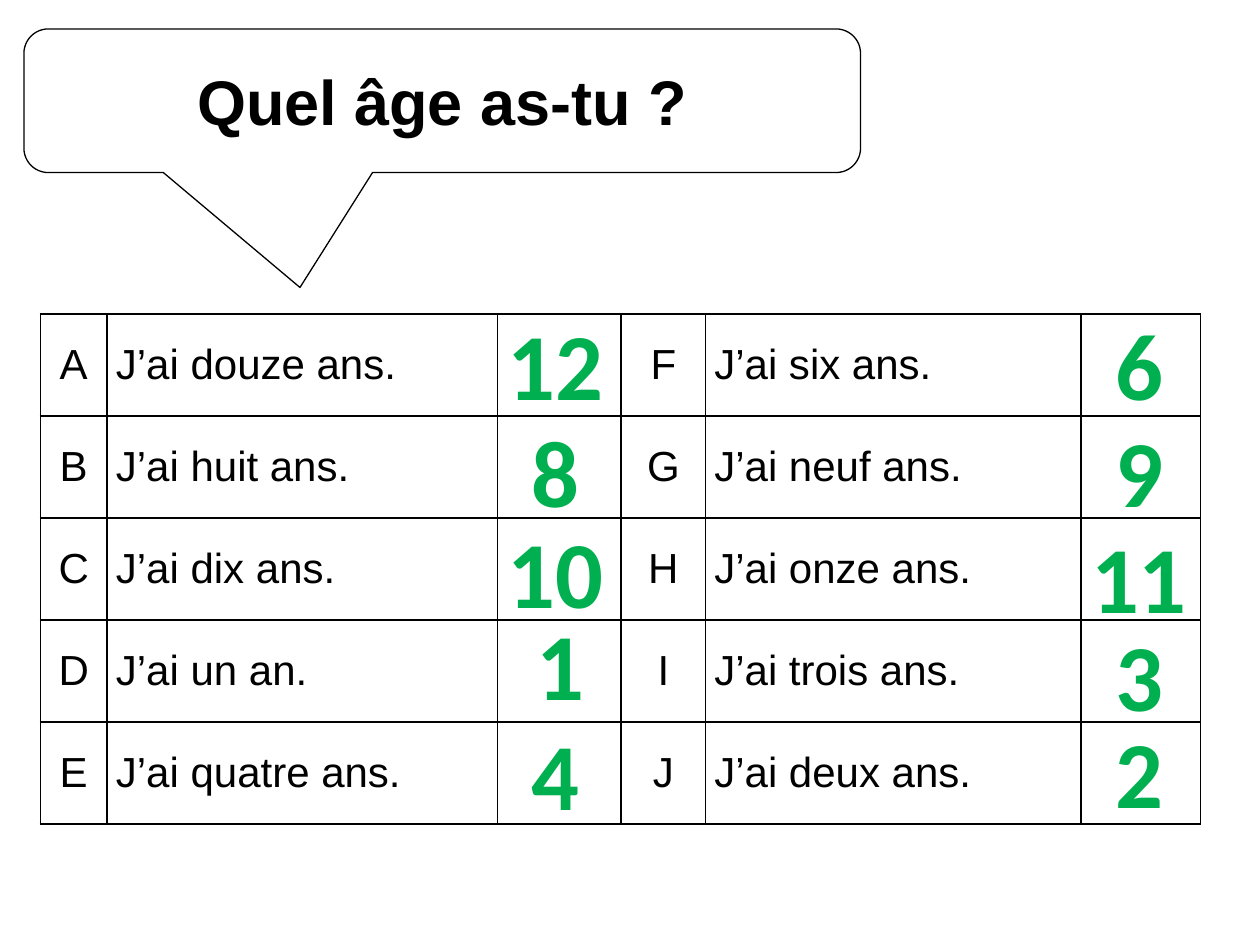
from dataclasses import dataclass

from lxml import etree
from pptx import Presentation
from pptx import util as u
from pptx.dml.color import RGBColor
from pptx.enum import shapes, text
from pptx.oxml import ns


@dataclass(frozen=True)
class Theme:
    ink: RGBColor = RGBColor(0, 0, 0)
    paper: RGBColor = RGBColor(255, 255, 255)
    answer: RGBColor = RGBColor(0, 0xB0, 0x50)
    text_font: str = "Arial"
    answer_font: str = "Calibri"
    title_size: int = 36
    table_size: int = 24
    answer_size: int = 54


@dataclass(frozen=True)
class Item:
    letter: str
    sentence: str
    age: str
    center: float
    top: float


THEME = Theme()
LEFT_ITEMS = [
    Item("A", "J’ai douze ans.", "12", 4.41, 2.38),
    Item("B", "J’ai huit ans.", "8", 4.41, 3.23),
    Item("C", "J’ai dix ans.", "10", 4.41, 4.03),
    Item("D", "J’ai un an.", "1", 4.45, 4.76),
    Item("E", "J’ai quatre ans.", "4", 4.41, 5.63),
]
RIGHT_ITEMS = [
    Item("F", "J’ai six ans.", "6", 9.04, 2.38),
    Item("G", "J’ai neuf ans.", "9", 9.04, 3.23),
    Item("H", "J’ai onze ans.", "11", 9.04, 4.07),
    Item("I", "J’ai trois ans.", "3", 9.04, 4.85),
    Item("J", "J’ai deux ans.", "2", 9.04, 5.62),
]
COLUMN_WIDTHS = [0.53, 3.1, 0.98, 0.67, 2.98, 0.95]
ROW_HEIGHT = 0.81
DIGIT_WIDTH = 0.38
BOX_PADDING = 0.2


def add_line(parent, tag: str, points: float, color: RGBColor, index: int) -> None:
    """Insert a solid DrawingML line at a given place among the children."""
    line = etree.Element(ns.qn(tag), w=str(u.Pt(points)))
    fill = etree.SubElement(line, ns.qn("a:solidFill"))
    etree.SubElement(fill, ns.qn("a:srgbClr"), val=str(color))
    parent.insert(index, line)


def write(frame, words: str, *, size: int, font: str = THEME.text_font,
          color: RGBColor = THEME.ink, bold: bool = False,
          align=text.PP_ALIGN.LEFT, outline: float = 0) -> None:
    para = frame.paragraphs[0]
    para.alignment = align
    span = para.add_run()
    span.text = words
    span.font.size = u.Pt(size)
    span.font.name = font
    span.font.bold = bold
    span.font.color.rgb = color
    if outline:
        add_line(span.font._element, "a:ln", outline, THEME.ink, 0)


def style_cell(cell) -> None:
    cell.fill.background()
    cell.vertical_anchor = text.MSO_ANCHOR.MIDDLE
    cell.margin_left = cell.margin_right = u.Inches(0.07)
    cell.margin_top = cell.margin_bottom = 0
    properties = cell._tc.get_or_add_tcPr()
    for index, side in enumerate(("a:lnL", "a:lnR", "a:lnT", "a:lnB")):
        add_line(properties, side, 1, THEME.ink, index)


def add_sentence_table(page) -> None:
    rows = len(LEFT_ITEMS)
    frame = page.shapes.add_table(
        rows, len(COLUMN_WIDTHS), u.Inches(0.32), u.Inches(2.49),
        u.Inches(sum(COLUMN_WIDTHS)), u.Inches(rows * ROW_HEIGHT))
    table = frame.table
    table.first_row = table.horz_banding = False
    for column, width in zip(table.columns, COLUMN_WIDTHS):
        column.width = u.Inches(width)
    for row in table.rows:
        row.height = u.Inches(ROW_HEIGHT)
    for cell in table.iter_cells():
        style_cell(cell)
    for first_column, items in ((0, LEFT_ITEMS), (3, RIGHT_ITEMS)):
        for row, item in enumerate(items):
            write(table.cell(row, first_column).text_frame, item.letter,
                  size=THEME.table_size, align=text.PP_ALIGN.CENTER)
            write(table.cell(row, first_column + 1).text_frame, item.sentence,
                  size=THEME.table_size)


def add_question(page) -> None:
    bubble = page.shapes.add_shape(
        shapes.MSO_SHAPE.ROUNDED_RECTANGULAR_CALLOUT,
        u.Inches(0.19), u.Inches(0.23), u.Inches(6.64), u.Inches(1.14))
    bubble.shadow.inherit = False
    for index, value in enumerate((-0.17, 1.3, 0.17)):
        bubble.adjustments[index] = value
    bubble.fill.solid()
    bubble.fill.fore_color.rgb = THEME.paper
    bubble.line.color.rgb = THEME.ink
    bubble.line.width = u.Pt(0.75)
    bubble.text_frame.vertical_anchor = text.MSO_ANCHOR.MIDDLE
    write(bubble.text_frame, "Quel âge as-tu ?", size=THEME.title_size,
          bold=True, align=text.PP_ALIGN.CENTER)


def add_age(page, item: Item) -> None:
    width = BOX_PADDING + DIGIT_WIDTH * len(item.age)
    box = page.shapes.add_textbox(
        u.Inches(item.center - width / 2), u.Inches(item.top),
        u.Inches(width), u.Inches(1.01))
    box.text_frame.word_wrap = False
    box.text_frame.auto_size = text.MSO_AUTO_SIZE.SHAPE_TO_FIT_TEXT
    write(box.text_frame, item.age, size=THEME.answer_size,
          font=THEME.answer_font, color=THEME.answer, bold=True,
          align=text.PP_ALIGN.CENTER, outline=2.25)


def main() -> None:
    deck = Presentation()
    deck.slide_width, deck.slide_height = u.Inches(10), u.Inches(7.5)
    page = deck.slides.add_slide(deck.slide_layouts[6])
    add_sentence_table(page)
    add_question(page)
    for item in LEFT_ITEMS + RIGHT_ITEMS:
        add_age(page, item)
    deck.save("out.pptx")


if __name__ == "__main__":
    main()
